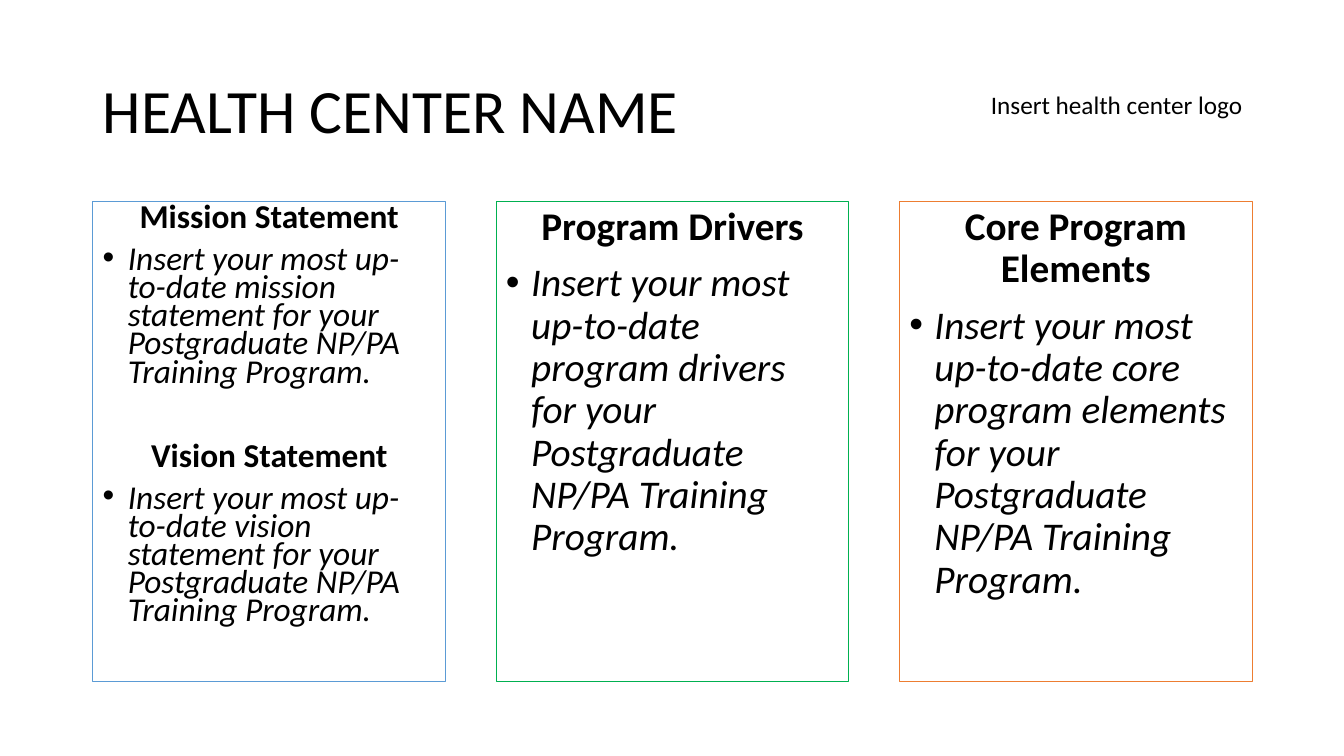
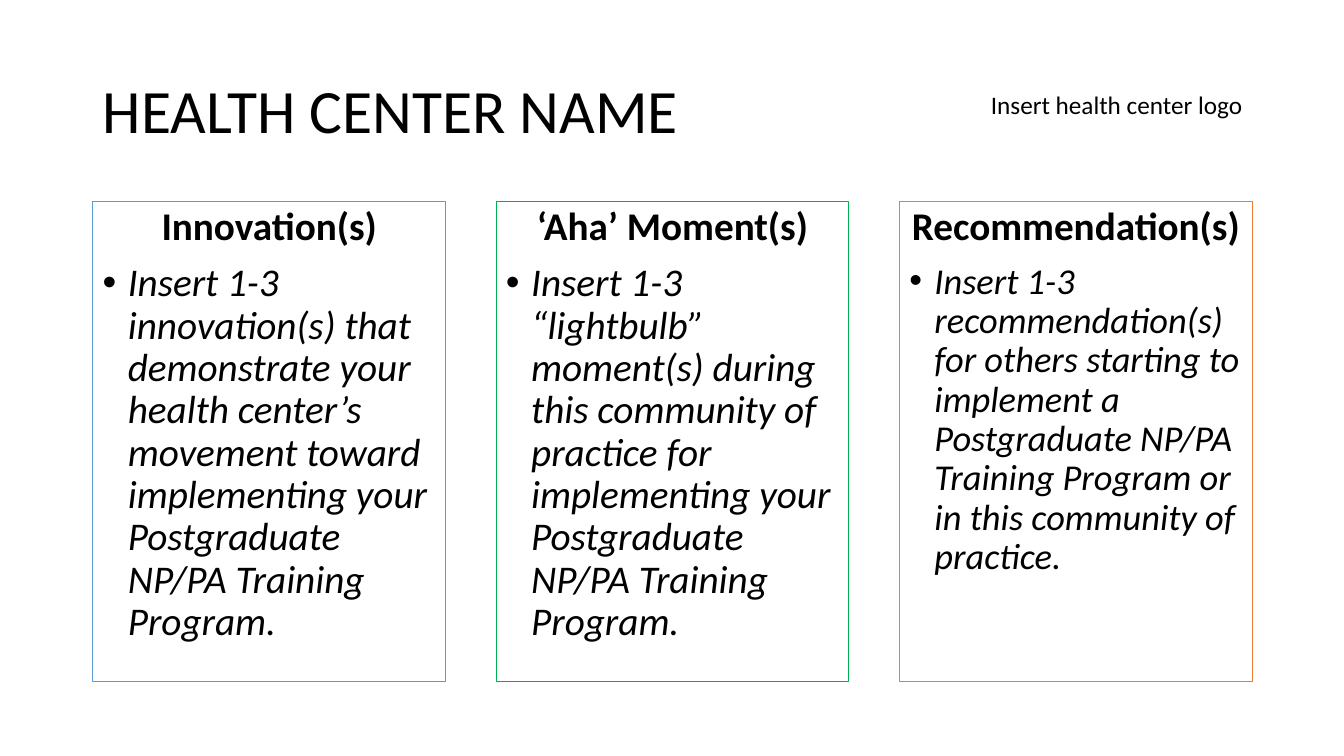
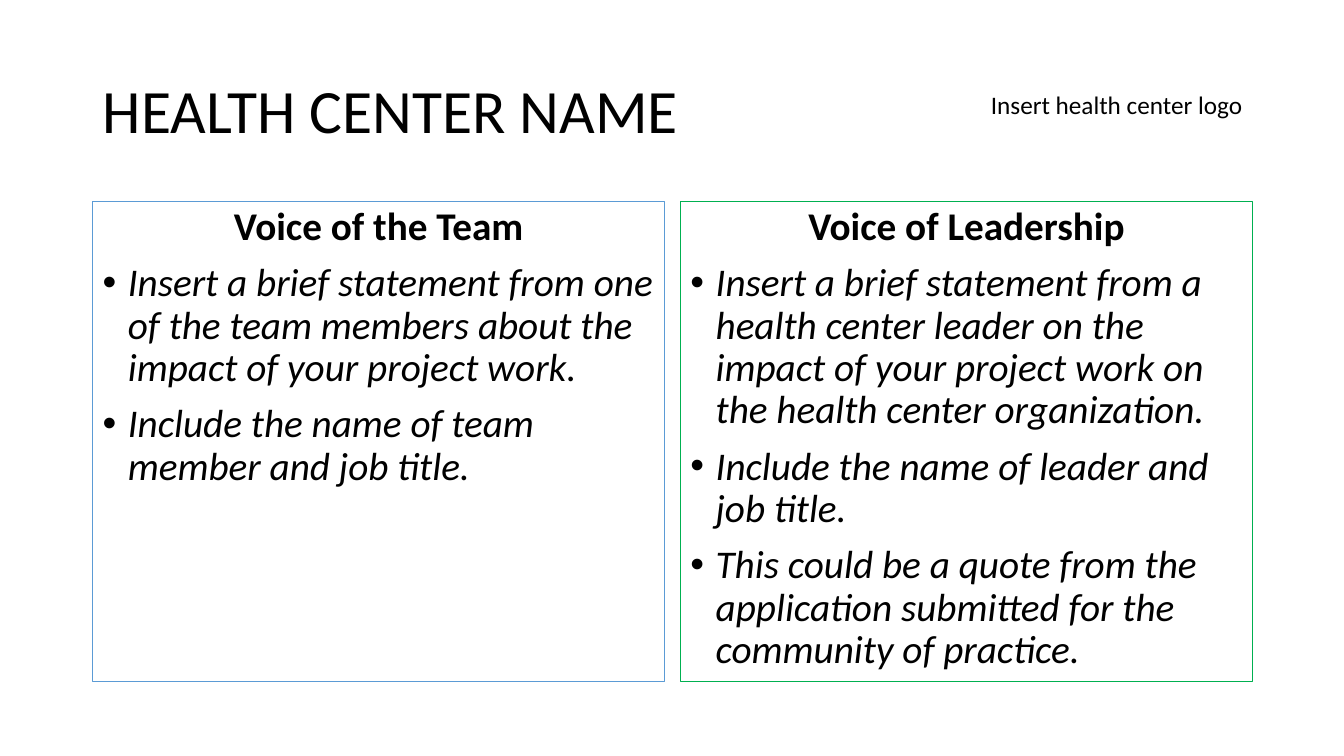
import dataclasses

import pptx
import pptx.dml.color
import pptx.enum.shapes
import pptx.enum.text
import pptx.oxml
import pptx.oxml.ns
import pptx.util
from pptx.util import Inches

FONT = "Calibri"
COLOURS = {"text": "000000", "blue": "5B9BD5", "green": "00B050", "orange": "ED7D31"}
PANEL_COLOURS = ("blue", "green", "orange")
ALIGN = pptx.enum.text.PP_ALIGN
ANCHOR = pptx.enum.text.MSO_ANCHOR

TITLE_BOX = (0.92, 0.4, 11.5, 1.45)
LOGO_BOX = (6.75, 0.23, 5.67, 1.62)
BODY_BOX = (0.92, 2, 11.5, 4.76)


@dataclasses.dataclass
class Section:
    """A centred heading with the bullets under it."""
    heading: str
    bullets: list
    heading_size: float = 28
    bullet_size: float = 28
    line_spacing: float = 0.9
    space_before: float = 10


def colour(name):
    """Return the named colour."""
    return pptx.dml.color.RGBColor.from_string(COLOURS[name])


def write(paragraph, text, size, alignment, bold=False, italic=False):
    """Fill a paragraph with text in the deck's font."""
    paragraph.text = text
    paragraph.alignment = alignment
    for run in paragraph.runs:
        run.font.name = FONT
        run.font.size = pptx.util.Pt(size)
        run.font.bold = bold
        run.font.italic = italic
        run.font.color.rgb = colour("text")


def set_spacing(paragraph, line_spacing, space_before):
    """Set line spacing and the points above a paragraph."""
    paragraph.line_spacing = line_spacing
    paragraph.space_before = pptx.util.Pt(space_before)


def add_bullet(paragraph):
    """Give a paragraph a round bullet and a hanging indent."""
    properties = paragraph._p.get_or_add_pPr()
    properties.set("marL", str(Inches(0.25)))
    properties.set("indent", str(Inches(-0.25)))
    namespace = pptx.oxml.ns.nsdecls("a")
    for markup in ('<a:buFont {} typeface="Arial"/>', '<a:buChar {} char="•"/>'):
        properties.append(pptx.oxml.parse_xml(markup.format(namespace)))


def add_label(slide, box, text, size, alignment, line_spacing=1.0):
    """Place one line of text in the vertical middle of a box."""
    frame = slide.shapes.add_textbox(*map(Inches, box)).text_frame
    frame.word_wrap = True
    frame.vertical_anchor = ANCHOR.MIDDLE
    write(frame.paragraphs[0], text, size, alignment)
    frame.paragraphs[0].line_spacing = line_spacing


def add_panel(slide, box, line_colour, sections):
    """Draw an outlined panel and write its sections from the top."""
    rectangle = pptx.enum.shapes.MSO_SHAPE.RECTANGLE
    panel = slide.shapes.add_shape(rectangle, *map(Inches, box))
    panel.shadow.inherit = False
    panel.fill.background()
    panel.line.color.rgb = colour(line_colour)
    panel.line.width = pptx.util.Pt(0.75)
    frame = panel.text_frame
    frame.word_wrap = True
    frame.vertical_anchor = ANCHOR.TOP
    for index, section in enumerate(sections):
        heading = frame.add_paragraph() if index else frame.paragraphs[0]
        write(heading, section.heading, section.heading_size, ALIGN.CENTER, bold=True)
        set_spacing(heading, section.line_spacing, section.space_before)
        for text in section.bullets:
            bullet = frame.add_paragraph()
            write(bullet, text, section.bullet_size, ALIGN.LEFT, italic=True)
            set_spacing(bullet, section.line_spacing, 10)
            add_bullet(bullet)


def add_panel_slide(presentation, panels, gap):
    """Add a slide with the shared header and a row of equal panels."""
    slide = presentation.slides.add_slide(presentation.slide_layouts[6])
    add_label(slide, TITLE_BOX, "HEALTH CENTER NAME", 44, ALIGN.LEFT, 0.9)
    add_label(slide, LOGO_BOX, "Insert health center logo", 18, ALIGN.RIGHT)
    left, top, total_width, height = BODY_BOX
    width = (total_width - gap * (len(panels) - 1)) / len(panels)
    for index, (line_colour, sections) in enumerate(zip(PANEL_COLOURS, panels)):
        box = (left + index * (width + gap), top, width, height)
        add_panel(slide, box, line_colour, sections)


def statement(kind, space_before=10):
    """Return the compact section for a mission or vision statement."""
    text = (f"Insert your most up-to-date {kind.lower()} statement for your "
            "Postgraduate NP/PA Training Program.")
    return Section(f"{kind} Statement", [text], 23.8, 23.8, 0.7, space_before)


def main():
    """Build and save the presentation."""
    presentation = pptx.Presentation()
    presentation.slide_width = Inches(13.33)
    presentation.slide_height = Inches(7.5)

    add_panel_slide(presentation, [
        [statement("Mission"), statement("Vision", space_before=40)],
        [Section("Program Drivers", [
            "Insert your most up-to-date program drivers for your "
            "Postgraduate NP/PA Training Program."])],
        [Section("Core Program Elements", [
            "Insert your most up-to-date core program elements for your "
            "Postgraduate NP/PA Training Program."])],
    ], gap=0.5)

    add_panel_slide(presentation, [
        [Section("Innovation(s)", [
            "Insert 1-3 innovation(s) that demonstrate your health center’s movement "
            "toward implementing your Postgraduate NP/PA Training Program."])],
        [Section("‘Aha’ Moment(s)", [
            "Insert 1-3 “lightbulb” moment(s) during this community of practice "
            "for implementing your Postgraduate NP/PA Training Program."])],
        [Section("Recommendation(s)", [
            "Insert 1-3 recommendation(s) for others starting to implement a "
            "Postgraduate NP/PA Training Program or in this community of practice."],
            bullet_size=26)],
    ], gap=0.5)

    add_panel_slide(presentation, [
        [Section("Voice of the Team", [
            "Insert a brief statement from one of the team members about the "
            "impact of your project work.",
            "Include the name of team member and job title."])],
        [Section("Voice of Leadership", [
            "Insert a brief statement from a health center leader on the impact "
            "of your project work on the health center organization.",
            "Include the name of leader and job title.",
            "This could be a quote from the application submitted for the "
            "community of practice."])],
    ], gap=0.16)

    presentation.save("out.pptx")


if __name__ == "__main__":
    main()
